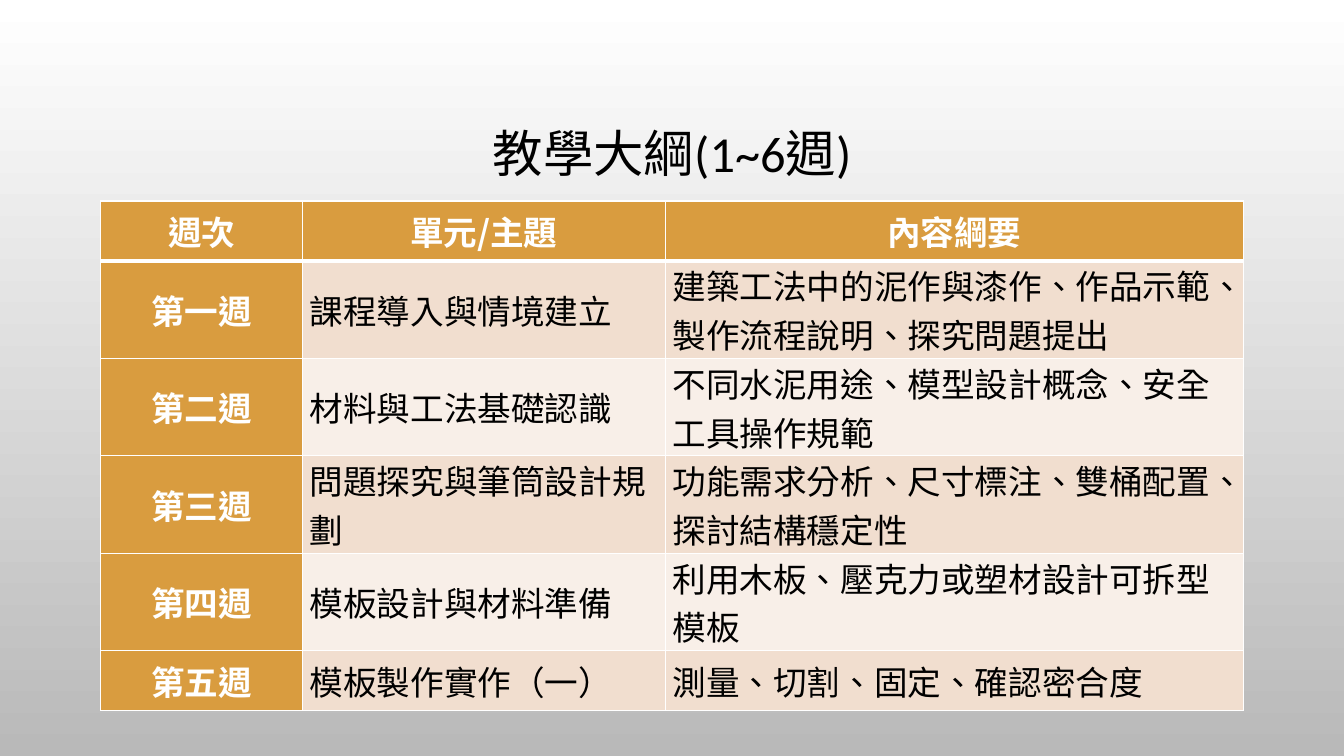
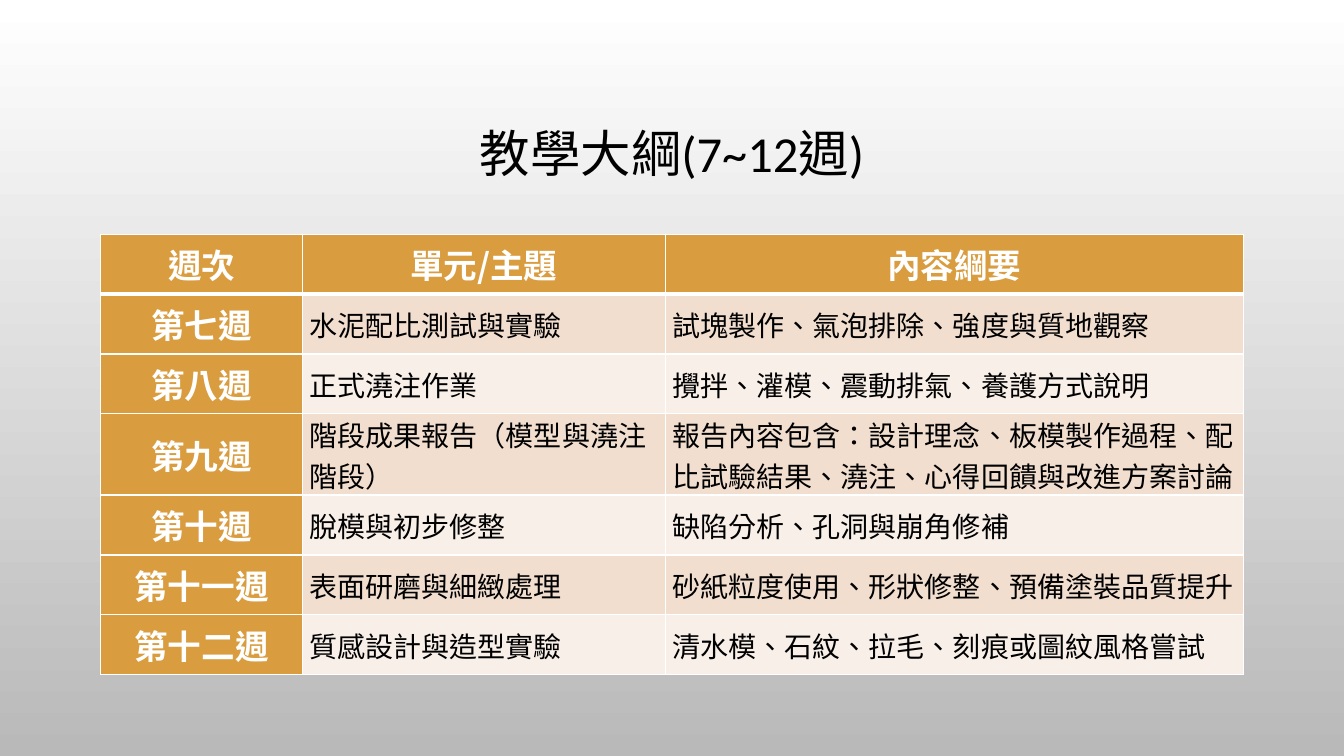
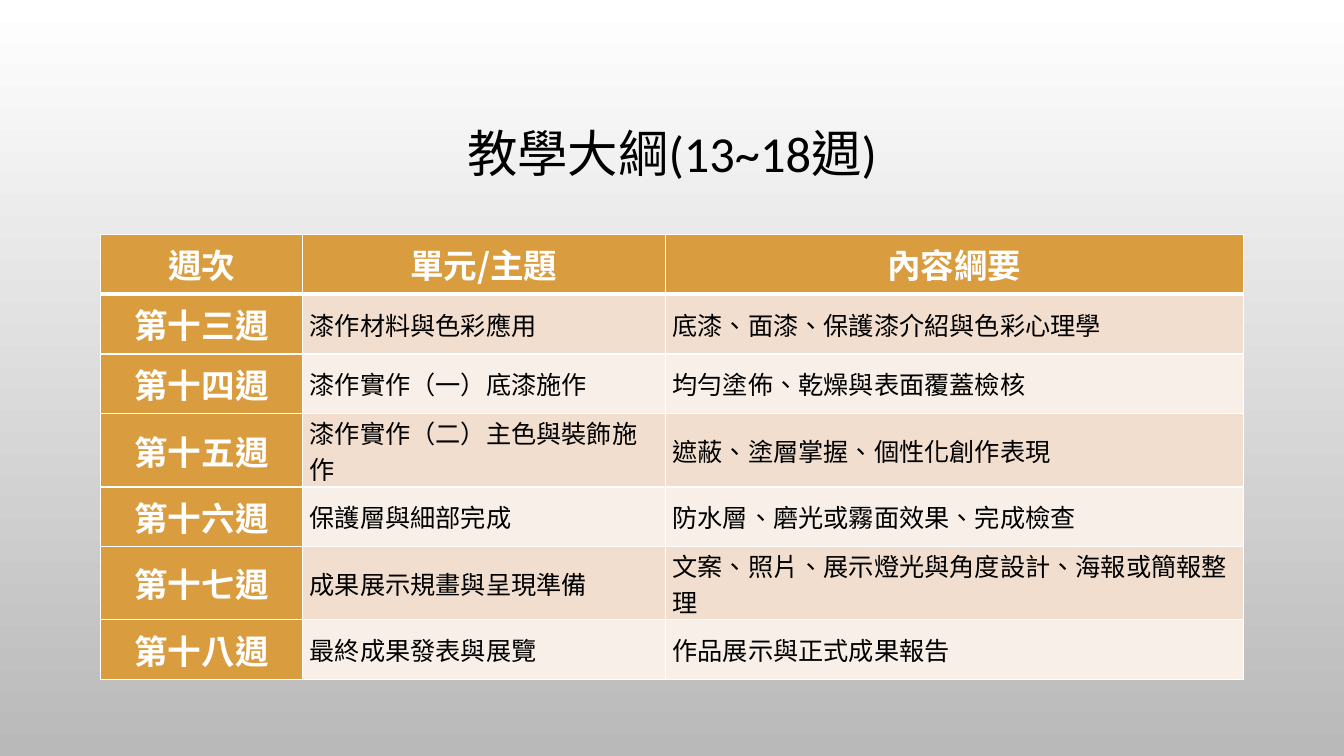
from lxml.etree import SubElement
from pptx import Presentation
from pptx.dml.color import RGBColor
from pptx.enum.lang import MSO_LANGUAGE_ID as Language
from pptx.enum.text import MSO_ANCHOR as Anchor, PP_ALIGN as Align
from pptx.oxml.ns import qn
from pptx.util import Pt

# Content: title, table top, body text size, rows
HEADER = ("週次", "單元/主題", "內容綱要")
SLIDES = [
    ("教學大綱(1~6週)", 143.6, 24, [
        ("第一週", "課程導入與情境建立", "建築工法中的泥作與漆作、作品示範、製作流程說明、探究問題提出"),
        ("第二週", "材料與工法基礎認識", "不同水泥用途、模型設計概念、安全工具操作規範"),
        ("第三週", "問題探究與筆筒設計規劃", "功能需求分析、尺寸標注、雙桶配置、探討結構穩定性"),
        ("第四週", "模板設計與材料準備", "利用木板、壓克力或塑材設計可拆型模板"),
        ("第五週", "模板製作實作（一）", "測量、切割、固定、確認密合度"),
    ]),
    ("教學大綱(7~12週)", 167.3, 20, [
        ("第七週", "水泥配比測試與實驗", "試塊製作、氣泡排除、強度與質地觀察"),
        ("第八週", "正式澆注作業", "攪拌、灌模、震動排氣、養護方式說明"),
        ("第九週", "階段成果報告（模型與澆注階段）",
         "報告內容包含：設計理念、板模製作過程、配比試驗結果、澆注、心得回饋與改進方案討論"),
        ("第十週", "脫模與初步修整", "缺陷分析、孔洞與崩角修補"),
        ("第十一週", "表面研磨與細緻處理", "砂紙粒度使用、形狀修整、預備塗裝品質提升"),
        ("第十二週", "質感設計與造型實驗", "清水模、石紋、拉毛、刻痕或圖紋風格嘗試"),
    ]),
    ("教學大綱(13~18週)", 167.3, 18, [
        ("第十三週", "漆作材料與色彩應用", "底漆、面漆、保護漆介紹與色彩心理學"),
        ("第十四週", "漆作實作（一）底漆施作", "均勻塗佈、乾燥與表面覆蓋檢核"),
        ("第十五週", "漆作實作（二）主色與裝飾施作", "遮蔽、塗層掌握、個性化創作表現"),
        ("第十六週", "保護層與細部完成", "防水層、磨光或霧面效果、完成檢查"),
        ("第十七週", "成果展示規畫與呈現準備", "文案、照片、展示燈光與角度設計、海報或簡報整理"),
        ("第十八週", "最終成果發表與展覽", "作品展示與正式成果報告"),
    ]),
]

# Shared style
WHITE = RGBColor(0xFF, 0xFF, 0xFF)
BLACK = RGBColor(0x00, 0x00, 0x00)
GRAY = RGBColor(0xB9, 0xB9, 0xB9)
ORANGE = RGBColor(0xD9, 0x9C, 0x3F)
BANDS = (RGBColor(0xF8, 0xEF, 0xE8), RGBColor(0xF1, 0xDE, 0xCF))
LATIN_FONT = "Calibri"
CJK_FONT = "Noto Sans CJK SC"
LEFT, WIDTH = 72, 816
COLUMN_WIDTHS = (144, 259.2, 412.8)
ROW_HEIGHT = 42.8
LINE_HEIGHT = 1.45  # of the text size
CELL_MARGIN = 5.2
HEADING_SIZE = 24


def style_text(paragraph, size, color, latin=CJK_FONT, bold=False):
    font = paragraph.font
    font.size, font.bold, font.name = Pt(size), bold, latin
    font.color.rgb = color
    font.language_id = Language.TRADITIONAL_CHINESE
    SubElement(font._element, qn("a:ea"), typeface=CJK_FONT)


def add_borders(cell, **widths):
    """Draw white borders; this must come before the cell's fill is set."""
    properties = cell._tc.get_or_add_tcPr()
    for side in "LRTB":
        line = SubElement(properties, qn(f"a:ln{side}"), w=str(Pt(widths.get(side, 1))))
        fill = SubElement(line, qn("a:solidFill"))
        SubElement(fill, qn("a:srgbClr"), val=str(WHITE))


def add_title(slide, text):
    frame = slide.shapes.add_textbox(Pt(LEFT), Pt(48.4), Pt(WIDTH), Pt(126)).text_frame
    frame.word_wrap = True
    frame.vertical_anchor = Anchor.MIDDLE
    paragraph = frame.paragraphs[0]
    paragraph.text = text
    paragraph.alignment = Align.CENTER
    paragraph.line_spacing = 0.9
    style_text(paragraph, 36, BLACK, LATIN_FONT)


def row_height(texts, body_size):
    """A row grows when one of its full-width texts needs a second line."""
    wraps = any(
        len(text) * body_size > width - 2 * CELL_MARGIN
        for text, width in zip(texts[1:], COLUMN_WIDTHS[1:])
    )
    return 2 * LINE_HEIGHT * body_size if wraps else ROW_HEIGHT


def fill_cell(cell, text, row, column, body_size):
    heading = row == 0 or column == 0
    cell.margin_left = cell.margin_right = Pt(0 if heading else CELL_MARGIN)
    cell.margin_top = cell.margin_bottom = 0
    cell.vertical_anchor = Anchor.MIDDLE
    add_borders(cell, T=3 if row == 1 else 1, B=3 if row == 0 else 1)
    cell.fill.solid()
    cell.fill.fore_color.rgb = ORANGE if heading else BANDS[row % 2]
    cell.text = text
    paragraph = cell.text_frame.paragraphs[0]
    if heading:
        paragraph.alignment = Align.CENTER
        style_text(paragraph, HEADING_SIZE, WHITE, bold=True)
    else:
        style_text(paragraph, body_size, BLACK)


def add_schedule(slide, top, body_size, weeks):
    rows = [HEADER, *weeks]
    heights = [row_height(texts, body_size) for texts in rows]
    table = slide.shapes.add_table(
        len(rows), len(HEADER), Pt(LEFT), Pt(top), Pt(WIDTH), Pt(sum(heights))
    ).table
    for column, width in zip(table.columns, COLUMN_WIDTHS):
        column.width = Pt(width)
    for row, (texts, height) in enumerate(zip(rows, heights)):
        table.rows[row].height = Pt(height)
        for column, text in enumerate(texts):
            fill_cell(table.cell(row, column), text, row, column, body_size)


def main():
    presentation = Presentation()
    presentation.slide_width, presentation.slide_height = Pt(960), Pt(540)

    # Background shared by all slides, white at the top
    background = presentation.slide_master.background.fill
    background.gradient()
    background.gradient_angle = 270
    for stop, color in zip(background.gradient_stops, (WHITE, GRAY)):
        stop.color.rgb = color

    for title, top, body_size, weeks in SLIDES:
        slide = presentation.slides.add_slide(presentation.slide_layouts[6])
        add_title(slide, title)
        add_schedule(slide, top, body_size, weeks)
    presentation.save("out.pptx")


if __name__ == "__main__":
    main()
